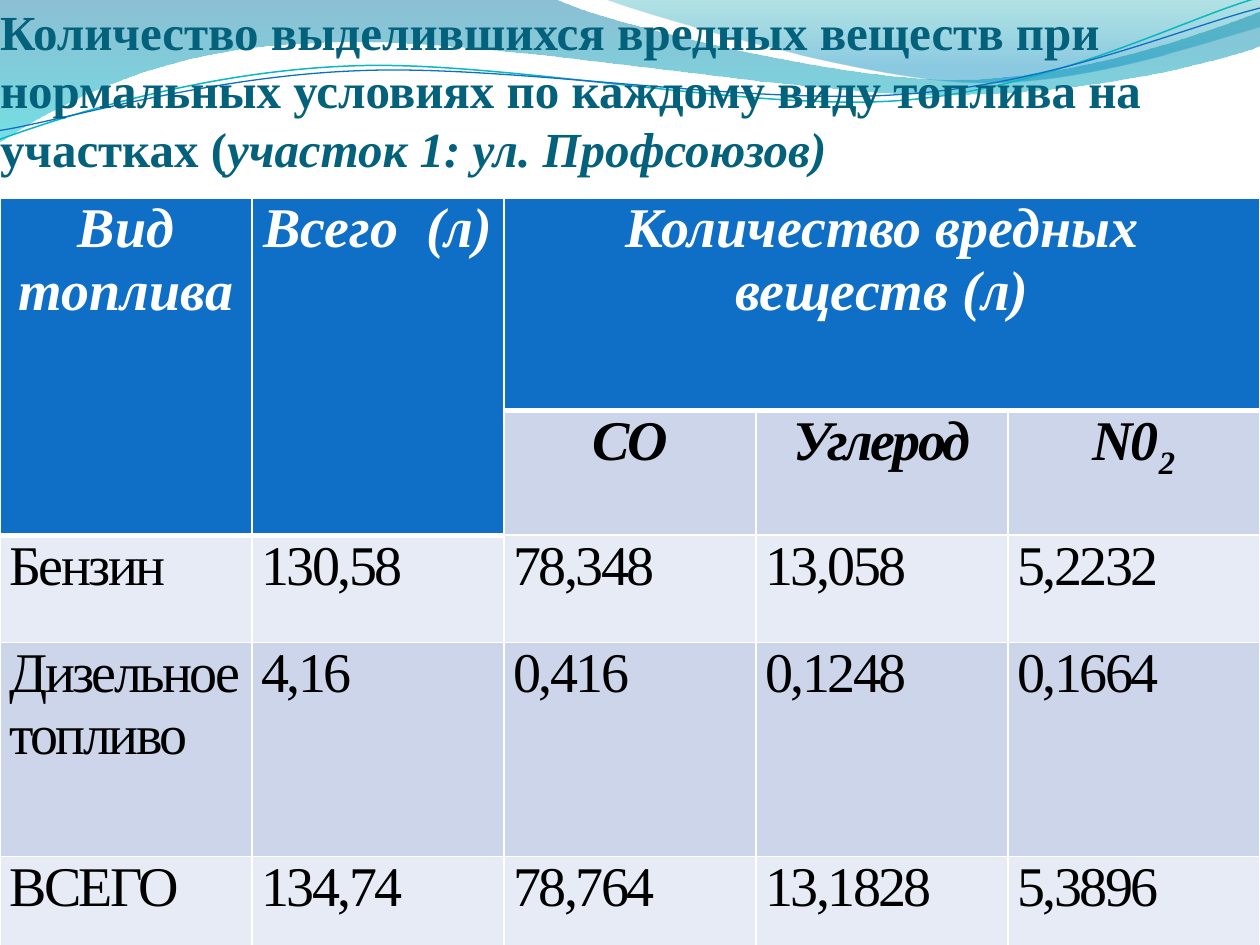
from dataclasses import dataclass
from typing import Optional

from lxml import etree
from pptx import Presentation
from pptx.dml.color import RGBColor
from pptx.enum.text import MSO_ANCHOR, MSO_AUTO_SIZE, PP_ALIGN
from pptx.oxml.ns import qn
from pptx.util import Inches, Pt

LEFT, CENTER = PP_ALIGN.LEFT, PP_ALIGN.CENTER
TOP, BOTTOM = MSO_ANCHOR.TOP, MSO_ANCHOR.BOTTOM
NO_AUTOFIT = MSO_AUTO_SIZE.NONE

WHITE = RGBColor(0xFF, 0xFF, 0xFF)
BLACK = RGBColor(0, 0, 0)
TITLE_TEAL = RGBColor(0x04, 0x61, 0x7B)
HEADER_BLUE = RGBColor(0x0F, 0x6F, 0xC6)
BAND_DARK = RGBColor(0xCC, 0xD5, 0xEA)
BAND_LIGHT = RGBColor(0xE7, 0xEB, 0xF5)
LINE_TEAL = RGBColor(0x0A, 0xB8, 0xBF)
WAVE_BLUE = RGBColor(0x00, 0x74, 0xA1)
WAVE_CYAN = RGBColor(0x00, 0xC6, 0xCF)
CREST_TEAL = RGBColor(0x00, 0xA1, 0xA9)
CREST_BLUE = RGBColor(0x00, 0x8B, 0xBF)

FONT = "Times New Roman"
LINE_ROTATION = 357.3
CELL_MARGIN = Pt(5.4)
COLUMN_WIDTH = 2
ROW_HEIGHTS = (1.69, 0.98, 0.85, 1.7, 0.71)


@dataclass(frozen=True)
class Stop:
    position: float
    color: RGBColor
    opacity: int


@dataclass(frozen=True)
class Wave:
    """An outline in inches: segments hold one point (line) or three (Bézier)."""
    start: tuple
    segments: tuple
    stops: tuple = ()
    line_color: Optional[RGBColor] = None
    line_width: float = 0


WAVES = (
    Wave((0, 0), (
        (4.4, -0.01),
        (4.76, 0.17, 6.64, 0.63, 7.58, 0.63),
        (8.53, 0.63, 9.58, 0.26, 10, 0.09),
        (10.01, 0.36),
        (9.83, 0.44, 8.7, 0.76, 7.46, 0.75),
        (6.22, 0.75, 3.82, 0.28, 2.57, 0.34),
        (1.29, 0.36, 0.46, 0.83, -0.01, 1.13),
    ), stops=(Stop(0, WAVE_BLUE, 45), Stop(1, WAVE_CYAN, 55))),
    Wave((4.79, -0.01), (
        (5.09, 0.11, 6.82, 0.62, 7.69, 0.65),
        (8.56, 0.69, 9.61, 0.32, 10, 0.21),
        (10, 0),
    ), stops=(Stop(0, CREST_TEAL, 30), Stop(0.8, CREST_BLUE, 45))),
    Wave((-0.02, 0.87), (
        (0.47, 0.72, 1.58, 0.41, 2.77, 0.42),
        (3.96, 0.42, 5.91, 0.93, 7.12, 0.9),
        (8.32, 0.87, 9.4, 0.36, 10, 0.22),
    ), line_color=LINE_TEAL, line_width=0.85),
    Wave((-0.02, 0.8), (
        (0.46, 0.75, 1.64, 0.45, 2.83, 0.46),
        (4.03, 0.46, 5.96, 0.89, 7.16, 0.85),
        (8.35, 0.83, 9.42, 0.42, 10.02, 0.3),
    ), line_color=HEADER_BLUE, line_width=0.75),
)

HEADERS = ("Вид топлива", "Всего  (л)", "Количество вредных веществ (л)")
SUBSTANCES = ("СО", "Углерод", "N0")
FUEL_ROWS = (
    ("Бензин", "130,58", "78,348", "13,058", "5,2232"),
    ("Дизельное топливо", "4,16", "0,416", "0,1248", "0,1664"),
    ("ВСЕГО", "134,74", "78,764", "13,1828", "5,3896"),
)


def add_text(paragraph, text: str, *, size: float = 32, color: RGBColor = BLACK,
             bold: bool = False, italic: bool = False, spacing: float = 0,
             baseline: int = 0, align=LEFT) -> None:
    """Append a run; spacing is in points, baseline in percent."""
    paragraph.alignment = align
    run = paragraph.add_run()
    run.text = text
    font = run.font
    font.name, font.size = FONT, Pt(size)
    font.bold, font.italic = bold, italic
    font.color.rgb = color
    properties = run._r.get_or_add_rPr()
    if spacing:
        properties.set("spc", str(round(spacing * 100)))
    if baseline:
        properties.set("baseline", str(baseline * 1000))


def bend_segments(shape, segments: tuple) -> None:
    """Turn the straight segments that have control points into Bézier curves."""
    for straight, segment in zip(list(shape.element.iter(qn("a:lnTo"))), segments):
        if len(segment) == 2:
            continue
        curve = etree.Element(qn("a:cubicBezTo"))
        for x, y in zip(segment[::2], segment[1::2]):
            etree.SubElement(curve, qn("a:pt"), x=str(Inches(x) - shape.left),
                             y=str(Inches(y) - shape.top))
        straight.getparent().replace(straight, curve)


def draw_wave(slide, wave: Wave) -> None:
    first, *rest = [(Inches(point[0]), Inches(point[1])) for point in
                    (wave.start, *(segment[-2:] for segment in wave.segments))]
    builder = slide.shapes.build_freeform(*first)
    builder.add_line_segments(rest, close=bool(wave.stops))
    shape = builder.convert_to_shape()
    bend_segments(shape, wave.segments)
    shape.shadow.inherit = False
    if not wave.stops:
        shape.rotation = LINE_ROTATION
        shape.fill.background()
        shape.line.color.rgb = wave.line_color
        shape.line.width = Pt(wave.line_width)
        return
    shape.line.fill.background()
    shape.fill.gradient()
    shape.fill.gradient_angle = 270
    for gradient_stop, stop in zip(shape.fill.gradient_stops, wave.stops):
        gradient_stop.position = stop.position
        gradient_stop.color.rgb = stop.color
    for color, stop in zip(shape.element.iter(qn("a:srgbClr")), wave.stops):
        etree.SubElement(color, qn("a:alpha")).set("val", str(stop.opacity * 1000))


def set_borders(cell, bottom_width: float) -> None:
    properties = cell._tc.get_or_add_tcPr()
    widths = {"lnL": 1, "lnR": 1, "lnT": 1, "lnB": bottom_width}
    for index, (side, width) in enumerate(widths.items()):
        border = etree.Element(qn(f"a:{side}"), w=str(Pt(width)))
        fill = etree.SubElement(border, qn("a:solidFill"))
        etree.SubElement(fill, qn("a:srgbClr")).set("val", str(WHITE))
        properties.insert(index, border)


def style_cell(cell, row: int, column: int) -> None:
    is_header = row == 0 or (row == 1 and column < 2)
    cell.fill.solid()
    cell.fill.fore_color.rgb = (
        HEADER_BLUE if is_header else BAND_DARK if row % 2 else BAND_LIGHT)
    cell.margin_left = cell.margin_right = CELL_MARGIN
    cell.margin_top = cell.margin_bottom = 0
    cell.vertical_anchor = TOP
    set_borders(cell, bottom_width=3 if is_header else 1)


def add_title(slide) -> None:
    title = slide.shapes.title
    title.left, title.top, title.width, title.height = map(Inches, (0, 0, 10, 1.41))
    frame = title.text_frame
    frame.auto_size, frame.word_wrap = NO_AUTOFIT, True
    frame.vertical_anchor = BOTTOM
    frame.margin_left = frame.margin_right = frame.margin_bottom = 0
    frame.margin_top = Inches(0.05)
    paragraph = frame.paragraphs[0]
    look = dict(size=28, color=TITLE_TEAL, bold=True)
    add_text(paragraph, "Количество выделившихся вредных веществ при нормальных "
             "условиях по каждому виду топлива на участках (", **look)
    add_text(paragraph, "участок 1: ул. Профсоюзов)", italic=True, **look)
    # The title lies in front of the waves.
    title.element.getparent().append(title.element)


def add_fuel_table(slide) -> None:
    row_count, column_count = len(ROW_HEIGHTS), len(FUEL_ROWS[0])
    table = slide.shapes.add_table(
        row_count, column_count, 0, Inches(1.57),
        Inches(COLUMN_WIDTH * column_count), Inches(sum(ROW_HEIGHTS))).table
    for column in table.columns:
        column.width = Inches(COLUMN_WIDTH)
    for row, height in enumerate(ROW_HEIGHTS):
        table.rows[row].height = Inches(height)
        for column in range(column_count):
            style_cell(table.cell(row, column), row, column)
    for column in range(2):
        table.cell(0, column).merge(table.cell(1, column))
    table.cell(0, 2).merge(table.cell(0, column_count - 1))

    def write(row: int, column: int, text: str, **look) -> None:
        add_text(table.cell(row, column).text_frame.paragraphs[0], text, **look)

    heading = dict(bold=True, italic=True, align=CENTER)
    for column, text in enumerate(HEADERS):
        write(0, column, text, color=WHITE, **heading)
    for column, text in enumerate(SUBSTANCES, start=2):
        write(1, column, text, spacing=-1.5, **heading)
    write(1, column_count - 1, "2", spacing=-1.5, baseline=-25, **heading)
    for row, values in enumerate(FUEL_ROWS, start=2):
        for column, text in enumerate(values):
            write(row, column, text, spacing=-1.5)


def main() -> None:
    presentation = Presentation()
    presentation.slide_width, presentation.slide_height = Inches(10), Inches(7.5)
    slide = presentation.slides.add_slide(presentation.slide_layouts[5])
    for wave in WAVES:
        draw_wave(slide, wave)
    add_title(slide)
    add_fuel_table(slide)
    presentation.save("out.pptx")


if __name__ == "__main__":
    main()
